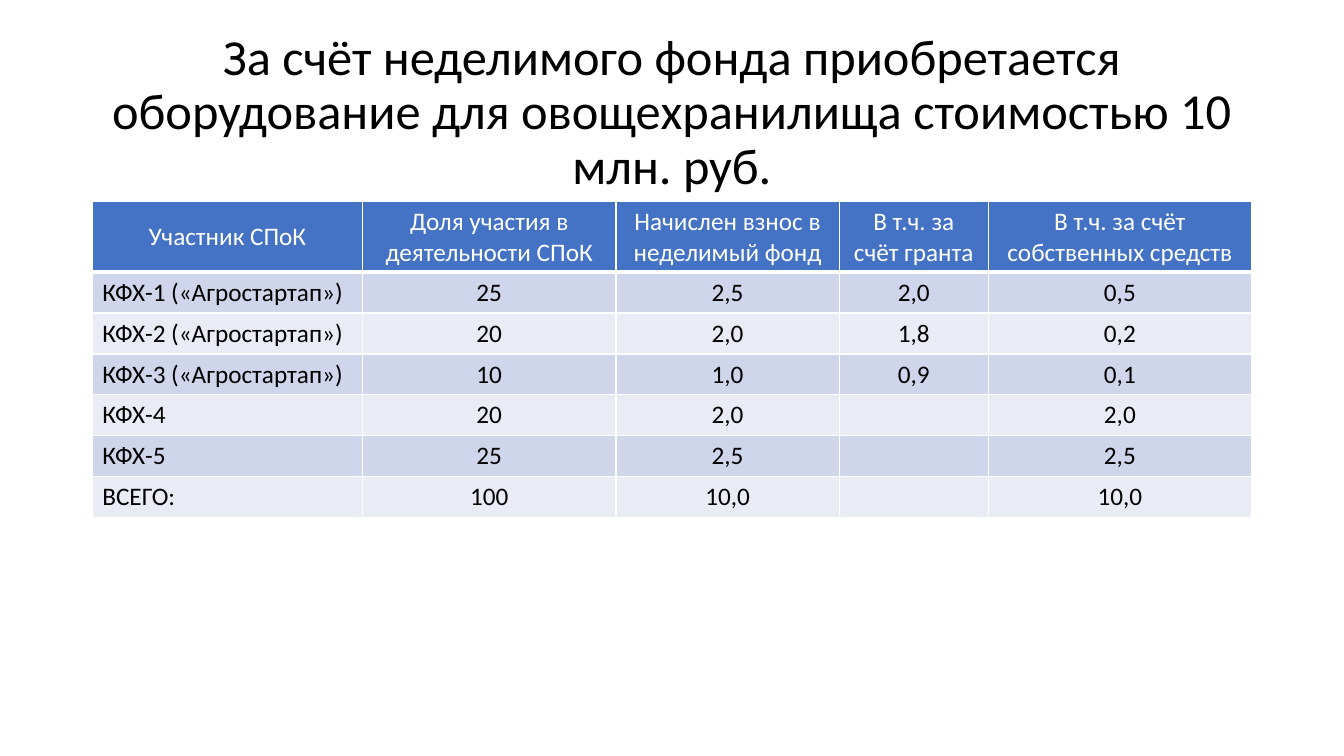
import pptx
import pptx.dml.color
import pptx.enum.text
import pptx.oxml
import pptx.oxml.ns
import pptx.util

Pt = pptx.util.Pt
RGB = pptx.dml.color.RGBColor
ALIGN = pptx.enum.text.PP_ALIGN
ANCHOR = pptx.enum.text.MSO_ANCHOR

BLACK = RGB(0x00, 0x00, 0x00)
WHITE = RGB(0xFF, 0xFF, 0xFF)
HEADER_BLUE = RGB(0x44, 0x72, 0xC4)
BANDS = (RGB(0xCF, 0xD5, 0xEA), RGB(0xE9, 0xEB, 0xF5))
FONT = "Calibri"

TITLE = ("За счёт неделимого фонда приобретается оборудование "
         "для овощехранилища стоимостью 10 млн. руб.")
ROWS = (
    ("Участник СПоК", "Доля участия в деятельности СПоК",
     "Начислен взнос в неделимый фонд", "В т.ч. за счёт гранта",
     "В т.ч. за счёт собственных средств"),
    ("КФХ-1 («Агростартап»)", "25", "2,5", "2,0", "0,5"),
    ("КФХ-2 («Агростартап»)", "20", "2,0", "1,8", "0,2"),
    ("КФХ-3 («Агростартап»)", "10", "1,0", "0,9", "0,1"),
    ("КФХ-4", "20", "2,0", "", "2,0"),
    ("КФХ-5", "25", "2,5", "", "2,5"),
    ("ВСЕГО:", "100", "10,0", "", "10,0"),
)
COL_WIDTHS = (193, 181, 159.5, 106.5, 188)
HEADER_HEIGHT, ROW_HEIGHT = 50.4, 29.2


def add_run(p, text, size, color):
    """Add one formatted run to a paragraph."""
    r = p.add_run()
    r.text = text
    r.font.name = FONT
    r.font.size = Pt(size)
    r.font.bold = False
    r.font.color.rgb = color


def set_borders(cell, bottom):
    """Draw white borders around a cell, with its own bottom width."""
    tc_pr = cell._tc.get_or_add_tcPr()
    widths = {"lnL": 1, "lnR": 1, "lnT": 1, "lnB": bottom}
    for i, (tag, width) in enumerate(widths.items()):
        tc_pr.insert(i, pptx.oxml.parse_xml(
            f'<a:{tag} {pptx.oxml.ns.nsdecls("a")} w="{Pt(width)}">'
            f'<a:solidFill><a:srgbClr val="{WHITE}"/></a:solidFill></a:{tag}>'))


def add_title(s, left, top, width, height):
    """Place the centred slide title in its box."""
    tf = s.shapes.add_textbox(Pt(left), Pt(top), Pt(width), Pt(height)).text_frame
    tf.word_wrap = True
    tf.vertical_anchor = ANCHOR.MIDDLE
    p = tf.paragraphs[0]
    p.alignment = ALIGN.CENTER
    p.line_spacing = 0.9
    add_run(p, TITLE, 36, BLACK)


def add_contributions(s, left, top):
    """Place the table of members' contributions."""
    height = HEADER_HEIGHT + ROW_HEIGHT * (len(ROWS) - 1)
    table = s.shapes.add_table(len(ROWS), len(COL_WIDTHS), Pt(left), Pt(top),
                               Pt(sum(COL_WIDTHS)), Pt(height)).table
    for col, width in zip(table.columns, COL_WIDTHS):
        col.width = Pt(width)
    for i, row in enumerate(ROWS):
        header = i == 0
        table.rows[i].height = Pt(HEADER_HEIGHT if header else ROW_HEIGHT)
        for j, text in enumerate(row):
            cell = table.cell(i, j)
            cell.fill.solid()
            cell.fill.fore_color.rgb = HEADER_BLUE if header else BANDS[(i - 1) % 2]
            cell.vertical_anchor = ANCHOR.MIDDLE if header else ANCHOR.TOP
            set_borders(cell, 3 if header else 1)
            p = cell.text_frame.paragraphs[0]
            p.alignment = ALIGN.CENTER if header or j else ALIGN.LEFT
            if text:
                add_run(p, text, 18, WHITE if header else BLACK)


def main():
    """Build and save the presentation."""
    prs = pptx.Presentation()
    prs.slide_width, prs.slide_height = Pt(960), Pt(540)
    s = prs.slides.add_slide(prs.slide_layouts[6])
    add_title(s, 66, 28.75, 828, 104.4)
    add_contributions(s, 66, 144)
    prs.save("out.pptx")


if __name__ == "__main__":
    main()
